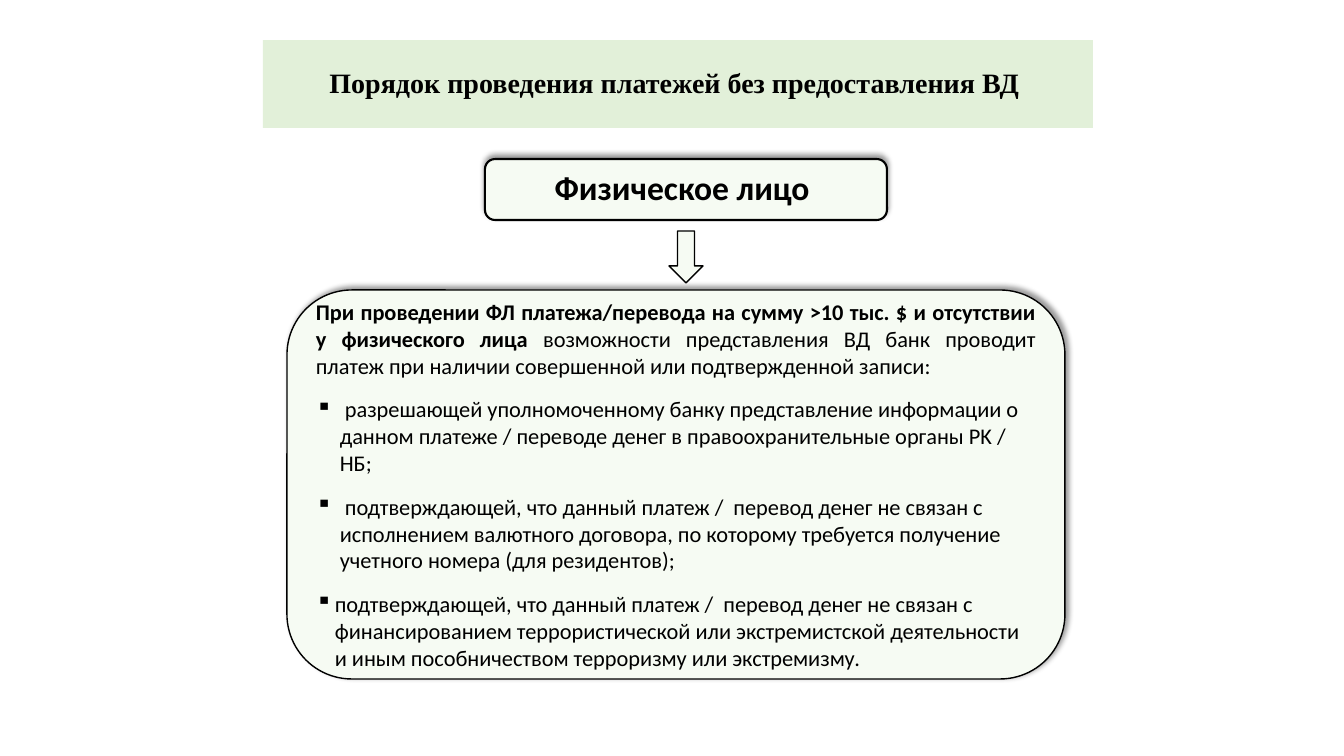
from lxml.etree import SubElement
from pptx import Presentation
from pptx.dml.color import RGBColor
from pptx.enum.shapes import MSO_SHAPE
from pptx.enum.text import MSO_ANCHOR, PP_ALIGN
from pptx.oxml.ns import qn
from pptx.util import Pt

PX = 12192000 / 1344  # EMU in one px
BLACK = RGBColor(0x00, 0x00, 0x00)
TITLE_FILL = RGBColor(0xE2, 0xF0, 0xD9)
BOX_FILL = RGBColor(0xF6, 0xFB, 0xF3)

TITLE = "Порядок проведения платежей без предоставления ВД "
PERSON = "Физическое лицо "
INTRO = [
    ("При проведении ФЛ платежа/перевода на сумму >10 тыс. $ и отсутствии "
     "у физического лица ", True),
    ("возможности представления ВД банк проводит платеж при наличии "
     "совершенной или подтвержденной записи:", False),
]
# Text and hanging indent of each condition
CONDITIONS = [
    (" разрешающей уполномоченному банку представление информации о данном "
     "платеже / переводе денег в правоохранительные органы РK / НБ;", 24),
    (" подтверждающей, что данный платеж /  перевод денег не связан с "
     "исполнением валютного договора, по которому требуется получение "
     "учетного номера (для резидентов);", 24),
    ("подтверждающей, что данный платеж /  перевод денег не связан с "
     "финансированием террористической или экстремистской деятельности "
     "и иным пособничеством терроризму или экстремизму.", 19),
]


def px(n):
    return round(n * PX)


def set_all(obj, **values):
    for name, value in values.items():
        setattr(obj, name, value)


def add_run(p, text, size, bold=False, name="Calibri"):
    r = p.add_run()
    r.text = text
    set_all(r.font, size=Pt(size), bold=bold, name=name)
    r.font.color.rgb = BLACK


def add_shadow(sp, angle):
    effects = sp._element.spPr.find(qn("a:effectLst"))
    shadow = SubElement(effects, qn("a:outerShdw"), blurRad=str(Pt(4)),
                        dist=str(Pt(3)), dir=str(angle * 60000),
                        algn="ctr", rotWithShape="0")
    color = SubElement(shadow, qn("a:srgbClr"), val=str(BLACK))
    SubElement(color, qn("a:alpha"), val="40000")


def add_box(slide, kind, box, line_width, shadow_angle=None):
    sp = slide.shapes.add_shape(kind, *map(px, box))
    sp.shadow.inherit = False
    sp.fill.solid()
    sp.fill.fore_color.rgb = BOX_FILL
    sp.line.color.rgb = BLACK
    sp.line.width = Pt(line_width)
    if shadow_angle is not None:
        add_shadow(sp, shadow_angle)
    return sp


def add_title(slide, box):
    sp = slide.shapes.title
    set_all(sp, **dict(zip(("left", "top", "width", "height"), map(px, box))))
    sp.fill.solid()
    sp.fill.fore_color.rgb = TITLE_FILL
    tf = sp.text_frame
    set_all(tf, margin_left=0, margin_top=0, margin_right=0, margin_bottom=0,
            word_wrap=False, vertical_anchor=MSO_ANCHOR.MIDDLE)
    p = tf.paragraphs[0]
    set_all(p, alignment=PP_ALIGN.CENTER, line_spacing=0.9)
    add_run(p, TITLE, 20, True, "Times New Roman")


def add_person(slide, box):
    sp = add_box(slide, MSO_SHAPE.ROUNDED_RECTANGLE, box, 1.5, 270)
    set_all(sp.text_frame, word_wrap=False, vertical_anchor=MSO_ANCHOR.MIDDLE)
    p = sp.text_frame.paragraphs[0]
    set_all(p, alignment=PP_ALIGN.CENTER, line_spacing=0.9)
    add_run(p, PERSON, 24, True)


def add_conditions(slide, box):
    sp = add_box(slide, MSO_SHAPE.ROUNDED_RECTANGLE, box, 1, 315)
    tf = sp.text_frame
    set_all(tf, word_wrap=True, vertical_anchor=MSO_ANCHOR.MIDDLE)
    # Justified introduction
    p = tf.paragraphs[0]
    set_all(p, alignment=PP_ALIGN.JUSTIFY, space_after=Pt(12))
    for text, bold in INTRO:
        add_run(p, text, 16, bold)
    # Bulleted conditions
    for text, indent in CONDITIONS:
        p = tf.add_paragraph()
        set_all(p, alignment=PP_ALIGN.LEFT, space_after=Pt(12))
        pPr = p._p.get_or_add_pPr()
        pPr.set("marL", str(px(indent)))
        pPr.set("indent", str(-px(indent)))
        SubElement(pPr, qn("a:buChar"), char="▪")
        add_run(p, text, 16)


def main():
    prs = Presentation()
    set_all(prs, slide_width=px(1344), slide_height=px(756))
    slide = prs.slides.add_slide(prs.slide_layouts[5])
    add_title(slide, (263, 40, 830, 88))
    add_person(slide, (485, 159, 402, 61))
    add_conditions(slide, (287, 290, 778, 389))
    add_box(slide, MSO_SHAPE.DOWN_ARROW, (669, 231, 34, 52), 1)
    prs.save("out.pptx")


if __name__ == "__main__":
    main()
